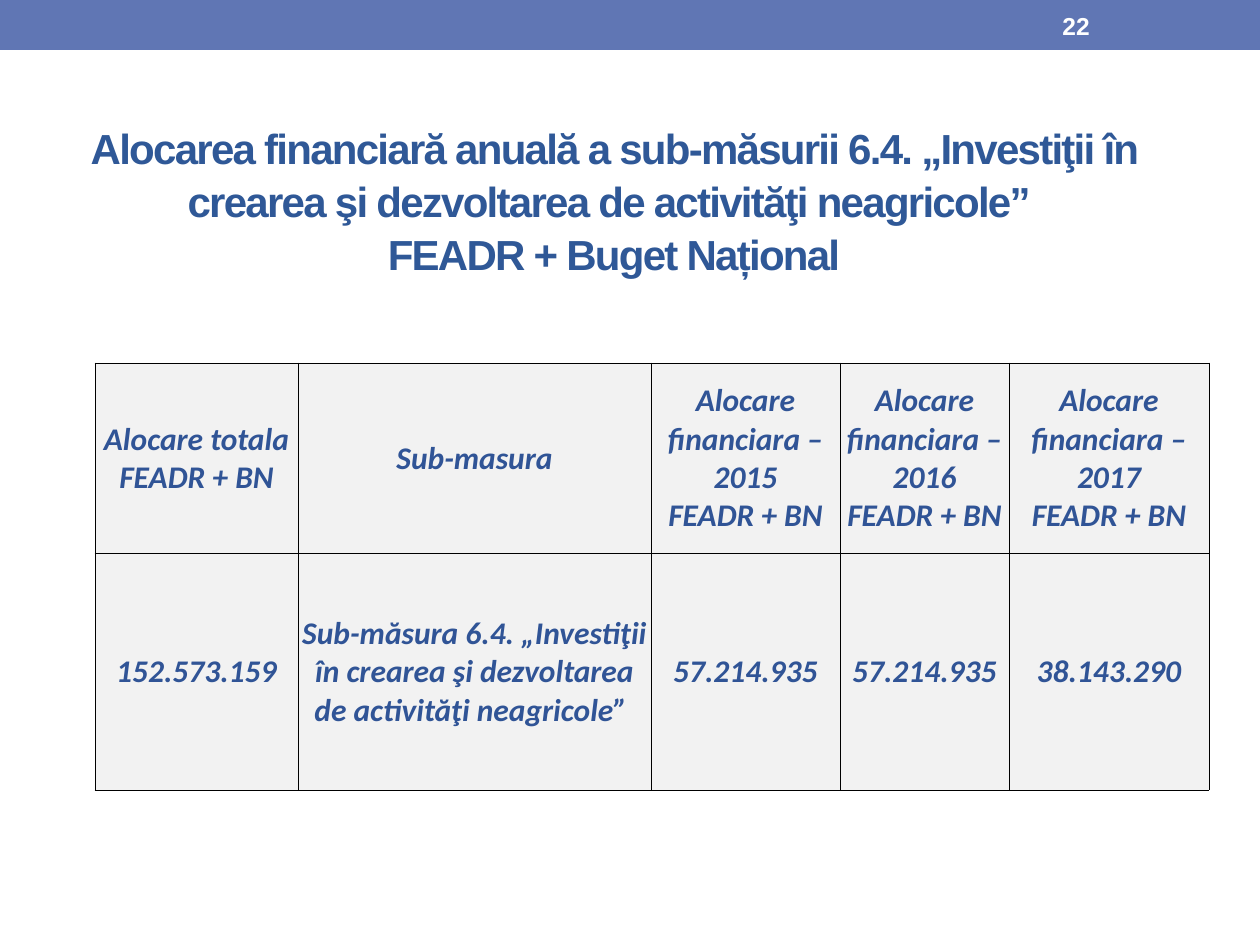
"""Build the slide on the yearly funding of sub-measure 6.4."""
from lxml import etree
from pptx import Presentation
from pptx.dml.color import RGBColor
from pptx.enum.shapes import MSO_SHAPE
from pptx.enum.text import MSO_ANCHOR, MSO_AUTO_SIZE, PP_ALIGN
from pptx.oxml.ns import qn
from pptx.util import Emu, Pt

RECTANGLE = MSO_SHAPE.RECTANGLE
MIDDLE, BOTTOM = MSO_ANCHOR.MIDDLE, MSO_ANCHOR.BOTTOM
LEFT, CENTER = PP_ALIGN.LEFT, PP_ALIGN.CENTER
NO_AUTOFIT = MSO_AUTO_SIZE.NONE

COLORS = {"bar": "6076B4", "title": "2F5897", "table": "305496",
          "cell": "F2F2F2", "border": "000000", "number": "FFFFFF"}
FORMATS = {
    "title": {"name": "Arial", "size": Pt(24), "bold": True},
    "table": {"name": "Calibri", "size": Pt(18), "bold": True, "italic": True},
    "number": {"name": "Arial", "size": Pt(14), "bold": True},
}


def px(*lengths):
    return [Emu(round(length * 914400 / 126)) for length in lengths]


def write(frame, text, role, align):
    frame.text = text
    for para in frame.paragraphs:
        para.alignment = align
        for span in para.runs:
            for key, value in FORMATS[role].items():
                setattr(span.font, key, value)
            span.font.color.rgb = RGBColor.from_string(COLORS[role])


deck = Presentation()
deck.slide_width, deck.slide_height = px(1260, 945)
page = deck.slides.add_slide(deck.slide_layouts[5])

bar = page.shapes.add_shape(RECTANGLE, *px(0, 0, 1260, 50))
bar.shadow.inherit = False
bar.fill.solid()
bar.fill.fore_color.rgb = RGBColor.from_string(COLORS["bar"])
bar.line.fill.background()

title = page.shapes.title
title.left, title.top, title.width, title.height = px(63, 86, 1102, 248)
frame = title.text_frame
frame.auto_size = NO_AUTOFIT
frame.word_wrap = True
frame.vertical_anchor = BOTTOM
frame.margin_bottom, = px(55)
write(frame, "Alocarea financiară anuală a sub-măsurii 6.4. „Investiţii în "
             "crearea şi dezvoltarea de activităţi neagricole” \v"
             "FEADR + Buget Național", "title", CENTER)
frame.paragraphs[0].line_spacing = 1.05
for span in frame.paragraphs[0].runs:
    span.font._element.set("spc", "-100")

headers = ["Alocare totala\nFEADR + BN", "Sub-masura"]
headers += [f"Alocare financiara – {year}\nFEADR + BN" for year in (2015, 2016, 2017)]
amounts = ["152.573.159",
           "Sub-măsura 6.4. „Investiţii în crearea şi dezvoltarea de activităţi neagricole” ",
           "57.214.935", "57.214.935", "38.143.290"]
widths = px(203, 353, 189, 169, 200)
heights = px(190, 237)

table = page.shapes.add_table(2, 5, *px(95, 363, 1114, 427)).table
table.first_row = table.horz_banding = False
for column, width in zip(table.columns, widths):
    column.width = width
for row, height, texts in zip(table.rows, heights, (headers, amounts)):
    row.height = height
    for cell, text in zip(row.cells, texts):
        write(cell.text_frame, text, "table", CENTER)
        cell.vertical_anchor = MIDDLE
        cell.margin_left, cell.margin_right, cell.margin_top, cell.margin_bottom = px(1, 1, 1, 0)
        properties = cell._tc.get_or_add_tcPr()
        for side in ("lnL", "lnR", "lnT", "lnB"):
            border = etree.SubElement(properties, qn(f"a:{side}"), w=str(Pt(0.5)))
            fill = etree.SubElement(border, qn("a:solidFill"))
            etree.SubElement(fill, qn("a:srgbClr"), val=COLORS["border"])
        cell.fill.solid()
        cell.fill.fore_color.rgb = RGBColor.from_string(COLORS["cell"])

number_box = page.shapes.add_textbox(*px(1050, 3, 147, 45))
number_box.text_frame.word_wrap = True
number_box.text_frame.vertical_anchor = MIDDLE
write(number_box.text_frame, "22", "number", LEFT)

deck.save("out.pptx")
